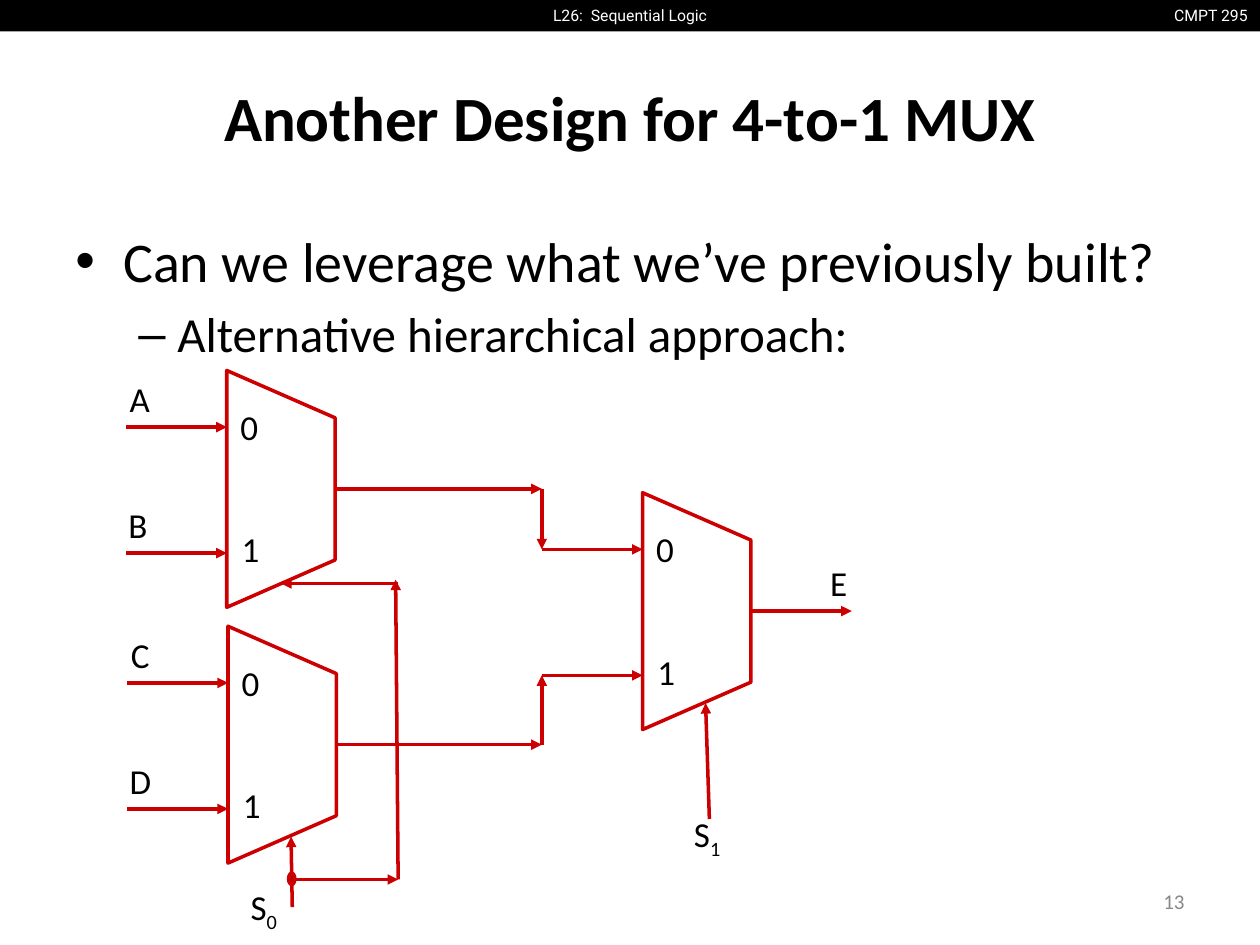
"""Build the slide showing a 4-to-1 MUX made from three 2-to-1 MUXes."""
from itertools import pairwise

from lxml.etree import SubElement
from pptx import Presentation
from pptx.dml.color import RGBColor
from pptx.enum.shapes import MSO_CONNECTOR, MSO_SHAPE
from pptx.enum.text import MSO_ANCHOR, MSO_AUTO_SIZE, PP_ALIGN
from pptx.oxml.ns import qn
from pptx.util import Inches, Pt

THEME = {
    "font": "Calibri", "header_font": "Roboto",
    "ink": "000000", "paper": "FFFFFF", "muted": "888888",
    "wire": "CC0000", "junction": "C00000", "wire_width": 2,
    "title": 36, "label": 20, "number": 12, "header": 9,
}

TITLE = "Another Design for 4-to-1 MUX"
HEADERS = [
    ("CMPT 295", (9.19, 0, 0.81, 0.25), PP_ALIGN.RIGHT),
    ("L26:  Sequential Logic", (4.07, 0, 1.86, 0.25), PP_ALIGN.CENTER),
]
PAGE_NUMBER = "13"
BULLETS = [
    {"text": "Can we leverage what we’ve previously built?", "level": 0,
     "mark": "•", "margin": 0.38, "hang": 0.38, "size": 32, "before": 0},
    {"text": "Alternative hierarchical approach:", "level": 1,
     "mark": "–", "margin": 0.81, "hang": 0.31, "size": 28, "before": 5.6},
]

MUX_WIDTH, MUX_HEIGHT, INPUT_LENGTH = 0.86, 1.88, 0.8
MUXES = [(1.8, 3.88), (1.81, 5.91), (5.1, 4.85)]
PORTS = [("0", -0.49, 0.01, -0.71), ("1", 0.51, 0.02, 0.26)]
WIRES = [
    [(2.65, 3.88), (4.3, 3.88), (4.3, 4.36)],
    [(2.66, 5.91), (4.3, 5.91), (4.3, 5.36)],
    [(5.96, 4.85), (6.76, 4.85)],
    [(2.32, 7.2), (2.31, 6.64)],
    [(5.63, 6.5), (5.6, 5.58)],
    [(2.31, 6.98), (3.16, 6.98), (3.14, 4.6)],
    [(3.16, 4.63), (2.23, 4.63)],
]
JUNCTION = (2.29, 6.93, 0.05, 0.09)
SIGNALS = [
    ("A", "", 0.93, 2.95, 0.36), ("B", "", 0.92, 3.95, 0.36),
    ("C", "", 0.94, 4.98, 0.35), ("D", "", 0.93, 5.98, 0.37),
    ("E", "", 6.49, 4.41, 0.35),
    ("S", "0", 1.89, 6.98, 0.43), ("S", "1", 5.41, 6.4, 0.43),
]


def color(name):
    return RGBColor.from_string(THEME[name])


def place(shape, box):
    for side, value in zip(("left", "top", "width", "height"), box):
        setattr(shape, side, Inches(value))


def style_font(font, size, ink="ink", face="font", bold=False):
    formats = {"name": THEME[face], "size": Pt(size), "bold": bold}
    for attribute, value in formats.items():
        setattr(font, attribute, value)
    font.color.rgb = color(ink)


def add_text(slide, text, box, size, align=PP_ALIGN.LEFT, subscript="",
             ink="ink", face="font", anchor=MSO_ANCHOR.TOP):
    frame = slide.shapes.add_textbox(*map(Inches, box)).text_frame
    frame.word_wrap = False
    frame.vertical_anchor = anchor
    paragraph = frame.paragraphs[0]
    paragraph.alignment = align
    for part in filter(None, (text, subscript)):
        run = paragraph.add_run()
        run.text = part
        style_font(run.font, size, ink, face)
    if subscript:
        run.font._element.set("baseline", "-25000")


def add_preset(slide, preset, box, fill=None, line=None):
    shape = slide.shapes.add_shape(preset, *map(Inches, box))
    shape.shadow.inherit = False
    if fill:
        shape.fill.solid()
        shape.fill.fore_color.rgb = color(fill)
    else:
        shape.fill.background()
    if line:
        shape.line.color.rgb = color(line)
        shape.line.width = Pt(THEME["wire_width"])
    else:
        shape.line.fill.background()
    return shape


def add_wire(slide, points):
    for start, end in pairwise(points):
        wire = slide.shapes.add_connector(
            MSO_CONNECTOR.STRAIGHT, *map(Inches, start + end))
        wire.line.color.rgb = color("wire")
        wire.line.width = Pt(THEME["wire_width"])
        SubElement(wire.line._get_or_add_ln(), qn("a:tailEnd"), type="triangle")
        SubElement(wire._element.spPr, qn("a:effectLst"))


def add_mux(slide, left, middle):
    box = (left + (MUX_WIDTH - MUX_HEIGHT) / 2, middle - MUX_WIDTH / 2,
           MUX_HEIGHT, MUX_WIDTH)
    mux = add_preset(slide, MSO_SHAPE.FLOWCHART_MANUAL_OPERATION, box, line="wire")
    mux.rotation = 270
    for digit, input_dy, digit_dx, digit_dy in PORTS:
        y = middle + input_dy
        add_wire(slide, [(left - INPUT_LENGTH, y), (left, y)])
        add_text(slide, digit, (left + digit_dx, middle + digit_dy, 0.34, 0.44),
                 THEME["label"])


def add_bullets(slide):
    frame = slide.shapes.add_textbox(*map(Inches, (0.5, 1.75, 9, 5.3))).text_frame
    frame.word_wrap = True
    for index, bullet in enumerate(BULLETS):
        paragraph = frame.add_paragraph() if index else frame.paragraphs[0]
        paragraph.text = bullet["text"]
        paragraph.level = bullet["level"]
        paragraph.space_before = Pt(bullet["before"])
        properties = paragraph._p.get_or_add_pPr()
        properties.set("marL", str(Inches(bullet["margin"])))
        properties.set("indent", str(-Inches(bullet["hang"])))
        mark_color = SubElement(properties, qn("a:buClr"))
        SubElement(mark_color, qn("a:srgbClr"), val=THEME["ink"])
        SubElement(properties, qn("a:buFont"), typeface="Arial")
        SubElement(properties, qn("a:buChar"), char=bullet["mark"])
        style_font(paragraph.runs[0].font, bullet["size"])


def add_title(slide):
    title = slide.shapes.title
    place(title, (0.5, 0.3, 9, 1.25))
    frame = title.text_frame
    frame.text = TITLE
    frame.auto_size = MSO_AUTO_SIZE.NONE
    frame.vertical_anchor = MSO_ANCHOR.MIDDLE
    frame.paragraphs[0].alignment = PP_ALIGN.CENTER
    style_font(frame.paragraphs[0].runs[0].font, THEME["title"], bold=True)


def main():
    deck = Presentation()
    deck.slide_width, deck.slide_height = Inches(10), Inches(7.5)
    slide = deck.slides.add_slide(deck.slide_layouts[5])

    add_preset(slide, MSO_SHAPE.RECTANGLE, (0, 0, 10, 0.25), fill="ink")
    for text, box, align in HEADERS:
        add_text(slide, text, box, THEME["header"], align,
                 ink="paper", face="header_font")
    add_title(slide)
    add_bullets(slide)
    add_text(slide, PAGE_NUMBER, (7.17, 6.95, 2.33, 0.4), THEME["number"],
             PP_ALIGN.RIGHT, ink="muted", anchor=MSO_ANCHOR.MIDDLE)

    for left, middle in MUXES:
        add_mux(slide, left, middle)
    for points in WIRES:
        add_wire(slide, points)
    add_preset(slide, MSO_SHAPE.OVAL, JUNCTION, fill="junction", line="wire")
    for name, subscript, left, top, width in SIGNALS:
        add_text(slide, name, (left, top, width, 0.44), THEME["label"],
                 subscript=subscript)

    deck.save("out.pptx")


if __name__ == "__main__":
    main()
